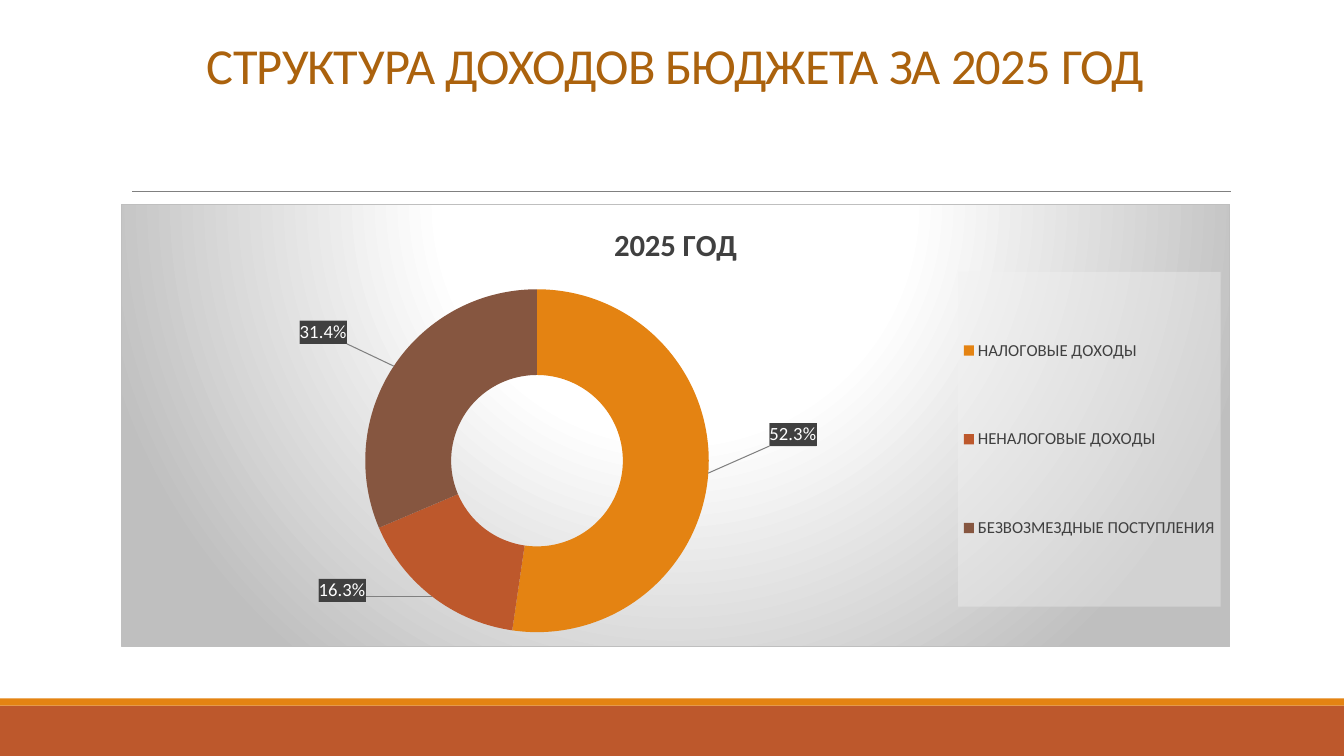
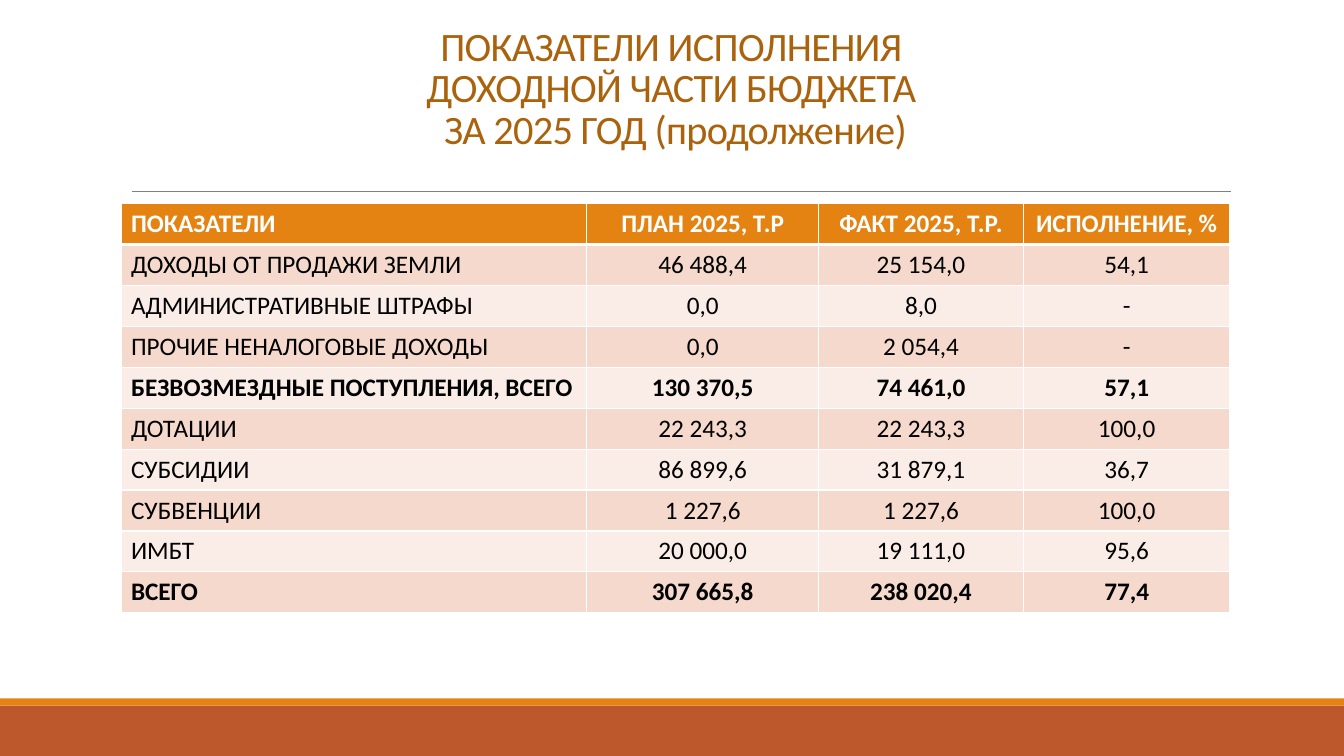
import pptx
import pptx.chart.data
import pptx.dml.color
import pptx.enum.chart
import pptx.enum.shapes
import pptx.enum.text
import pptx.oxml
import pptx.oxml.ns
import pptx.util
from pptx.util import Inches

FONT = "Calibri"
ORANGE, RUST, BROWN, TITLE = "E48312", "BD582C", "865640", "AB620D"
WHITE, BLACK, INK, RULE, SILVER = "FFFFFF", "000000", "404040", "808080", "BFBFBF"
BANDS = "FAEDE7", "F5D9CC"
NS = pptx.oxml.ns.nsdecls("a", "c")
ALIGN = pptx.enum.text.PP_ALIGN
LEFT, WIDTH, TOP = 1.2, 11, 2.02


def color(code):
    return pptx.dml.color.RGBColor.from_string(code)


def parse(xml):
    """Turn an XML string whose root holds {NS} into an element."""
    return pptx.oxml.parse_xml(xml.replace("{NS}", NS))


def style(font, size, code, bold=False):
    font.name, font.size, font.bold = FONT, pptx.util.Pt(size), bold
    font.color.rgb = color(code)


def write(frame, text, size=18, code=BLACK, bold=False, align=ALIGN.LEFT,
          lead=None, space=None):
    """Fill a text frame with one paragraph; space is in points per letter."""
    par = frame.paragraphs[0]
    par.text, par.alignment = text, align
    if lead:
        par.line_spacing = lead
    for run in par.runs:
        style(run.font, size, code, bold)
        if space:
            run.font._element.set("spc", str(round(space * 100)))


def layout(**parts):
    """Manual chart layout from fractions of the chart area."""
    inner = "".join(f'<c:{key} val="{val}"/>' for key, val in parts.items())
    return f"<c:layout {NS}><c:manualLayout>{inner}</c:manualLayout></c:layout>"


def place(part, xml):
    """Set the layout of a plot area or legend."""
    old = part.find(pptx.oxml.ns.qn("c:layout"))
    new = parse(xml)
    if old is not None:
        part.replace(old, new)
    elif part.tag == pptx.oxml.ns.qn("c:plotArea"):
        part.insert(0, new)
    else:
        part.find(pptx.oxml.ns.qn("c:legendPos")).addnext(new)


def labels(shifts):
    """Percent labels moved off the ring, each with a leader line."""
    fill = "".join(f'<a:{tag}><a:srgbClr val="{code}"/></a:{tag}>'
                   for tag, code in (("fgClr", INK), ("bgClr", "595959")))
    flags = "".join(f'<c:show{name} val="{int(name == "Percent")}"/>' for name in
                    ("LegendKey", "Val", "CatName", "SerName", "Percent", "BubbleSize"))
    look = (f'<c:numFmt formatCode="0.0%" sourceLinked="0"/>'
            f'<c:spPr><a:pattFill prst="dkVert">{fill}</a:pattFill></c:spPr>'
            f'<c:txPr><a:bodyPr/><a:p><a:pPr><a:defRPr sz="1330" b="0"><a:solidFill>'
            f'<a:srgbClr val="{WHITE}"/></a:solidFill><a:latin typeface="{FONT}"/>'
            f'</a:defRPr></a:pPr><a:endParaRPr lang="ru-RU"/></a:p></c:txPr>{flags}')
    each = "".join(f'<c:dLbl><c:idx val="{i}"/>{layout(x=x, y=y)}{look}</c:dLbl>'
                   for i, (x, y) in enumerate(shifts))
    return parse(f'<c:dLbls {NS}>{each}{look}<c:showLeaderLines val="1"/>'
                 f'<c:leaderLines><c:spPr><a:ln w="9525"><a:solidFill>'
                 f'<a:srgbClr val="{RULE}"/></a:solidFill></a:ln></c:spPr>'
                 f'</c:leaderLines></c:dLbls>')


class Deck:
    def __init__(self):
        self.file = pptx.Presentation()
        self.file.slide_width, self.file.slide_height = Inches(13.33), Inches(7.5)

    def start(self, title, size, height):
        """Begin a slide with its bands, rule and title."""
        self.shapes = self.file.slides.add_slide(self.file.slide_layouts[6]).shapes
        self.band(7, 0.5, RUST)
        self.band(6.93, 0.07, ORANGE)
        self.rule(1.31, 12.21, 1.9)
        box = self.shapes.add_textbox(Inches(LEFT), Inches(0.31), Inches(WIDTH),
                                      Inches(height))
        box.text_frame.word_wrap = True
        box.text_frame.vertical_anchor = pptx.enum.text.MSO_ANCHOR.BOTTOM
        write(box.text_frame, title, size=size, code=TITLE, align=ALIGN.CENTER,
              lead=0.85, space=-0.5)

    def band(self, top, height, code):
        band = self.shapes.add_shape(pptx.enum.shapes.MSO_SHAPE.RECTANGLE, 0,
                                     Inches(top), self.file.slide_width, Inches(height))
        band.shadow.inherit = False
        band.fill.solid()
        band.fill.fore_color.rgb = color(code)
        band.line.fill.background()

    def rule(self, left, right, top):
        line = self.shapes.add_connector(pptx.enum.shapes.MSO_CONNECTOR.STRAIGHT,
                                         Inches(left), Inches(top),
                                         Inches(right), Inches(top))
        line.line.width = pptx.util.Pt(0.5)
        line.line.color.rgb = color(RULE)
        line._element.spPr.append(parse("<a:effectLst {NS}/>"))

    def ring(self, title, shares, shifts):
        """Doughnut chart; shares maps a name to its value and colour."""
        data = pptx.chart.data.CategoryChartData()
        data.categories = list(shares)
        data.add_series(title, [value for value, code in shares.values()])
        chart = self.shapes.add_chart(
            pptx.enum.chart.XL_CHART_TYPE.DOUGHNUT, Inches(LEFT), Inches(TOP),
            Inches(WIDTH), Inches(4.4), data).chart
        style(chart.font, 10, BLACK)
        chart.has_title = True
        write(chart.chart_title.text_frame, title, size=22, code=INK, bold=True,
              align=ALIGN.CENTER)
        plot = chart.plots[0]
        plot.vary_by_categories = True
        series = plot.series[0]
        for i, (value, code) in enumerate(shares.values()):
            look = series.points[i].format
            look.fill.solid()
            look.fill.fore_color.rgb = color(code)
            look.line.fill.background()
        old = series.data_labels._element
        old.getparent().replace(old, labels(shifts))

        area = chart._chartSpace.chart
        place(area.plotArea, layout(layoutTarget="inner", xMode="edge", yMode="edge",
                                    x=0.22, y=0.19, w=0.31, h=0.78))
        self.legend(chart)
        stops = "".join(f'<a:gs pos="{pos}000"><a:srgbClr val="{code}"/></a:gs>'
                        for pos, code in ((0, WHITE), (39, WHITE), (100, SILVER)))
        area.addnext(parse(
            f'<c:spPr {NS}><a:gradFill><a:gsLst>{stops}</a:gsLst><a:path path="circle">'
            f'<a:fillToRect l="50000" t="-80000" r="50000" b="180000"/></a:path>'
            f'</a:gradFill><a:ln w="9525"><a:solidFill><a:srgbClr val="{SILVER}"/>'
            f'</a:solidFill></a:ln></c:spPr>'))

    def legend(self, chart):
        chart.has_legend = True
        legend = chart.legend
        legend.position = pptx.enum.chart.XL_LEGEND_POSITION.RIGHT
        legend.include_in_layout = False
        style(legend.font, 12, INK)
        part = legend._element
        place(part, layout(xMode="edge", yMode="edge", x=0.755, y=0.153, w=0.237, h=0.757))
        part.find(pptx.oxml.ns.qn("c:txPr")).addprevious(parse(
            '<c:spPr {NS}><a:solidFill><a:srgbClr val="F2F2F2"><a:alpha val="39000"/>'
            '</a:srgbClr></a:solidFill></c:spPr>'))

    def table(self, rows, widths, strong):
        """Banded table; strong lists the rows set in bold."""
        high = 0.406
        grid = self.shapes.add_table(len(rows), len(widths), Inches(LEFT), Inches(TOP),
                                     Inches(WIDTH), Inches(high * len(rows))).table
        for col, width in zip(grid.columns, widths):
            col.width = Inches(width)
        for i, row in enumerate(rows):
            grid.rows[i].height = Inches(high)
            for j, text in enumerate(row):
                cell = grid.cell(i, j)
                write(cell.text_frame, text, code=BLACK if i else WHITE,
                      bold=i in strong, align=ALIGN.CENTER if j else ALIGN.LEFT)
                self.edge(cell, top=3 if i == 1 else 1, base=1 if i else 3)
                cell.fill.solid()
                cell.fill.fore_color.rgb = color(BANDS[i % 2] if i else ORANGE)

    def edge(self, cell, top, base):
        """White cell borders, widths in points."""
        props = cell._tc.get_or_add_tcPr()
        for side, width in zip("LRTB", (1, 1, top, base)):
            props.append(parse(
                f'<a:ln{side} {NS} w="{pptx.util.Pt(width)}"><a:solidFill>'
                f'<a:srgbClr val="{WHITE}"/></a:solidFill></a:ln{side}>'))


def main():
    deck = Deck()
    deck.start("СТРУКТУРА ДОХОДОВ БЮДЖЕТА ЗА 2025 ГОД", 36, 0.68)
    deck.ring("2025 ГОД", {
        "НАЛОГОВЫЕ ДОХОДЫ": (52.3, ORANGE),
        "НЕНАЛОГОВЫЕ ДОХОДЫ": (16.3, RUST),
        "БЕЗВОЗМЕЗДНЫЕ ПОСТУПЛЕНИЯ": (31.4, BROWN),
    }, [(0.115, -0.08), (-0.105, 0.063), (-0.096, -0.13)])

    deck.start("ПОКАЗАТЕЛИ ИСПОЛНЕНИЯ \nДОХОДНОЙ ЧАСТИ БЮДЖЕТА \n"
               "ЗА 2025 ГОД (продолжение)", 28.8, 1.25)
    deck.table([
        ("ПОКАЗАТЕЛИ", "ПЛАН 2025, Т.Р", "ФАКТ 2025, Т.Р.", "ИСПОЛНЕНИЕ, %"),
        ("ДОХОДЫ ОТ ПРОДАЖИ ЗЕМЛИ", "46 488,4", "25 154,0", "54,1"),
        ("АДМИНИСТРАТИВНЫЕ ШТРАФЫ", "0,0", "8,0", "-"),
        ("ПРОЧИЕ НЕНАЛОГОВЫЕ ДОХОДЫ", "0,0", "2 054,4", "-"),
        ("БЕЗВОЗМЕЗДНЫЕ ПОСТУПЛЕНИЯ, ВСЕГО", "130 370,5", "74 461,0", "57,1"),
        ("ДОТАЦИИ", "22 243,3", "22 243,3", "100,0"),
        ("СУБСИДИИ", "86 899,6", "31 879,1", "36,7"),
        ("СУБВЕНЦИИ", "1 227,6", "1 227,6", "100,0"),
        ("ИМБТ", "20 000,0", "19 111,0", "95,6"),
        ("ВСЕГО", "307 665,8", "238 020,4", "77,4"),
    ], widths=(4.62, 2.3, 2.03, 2.05), strong=(0, 4, 9))
    deck.file.save("out.pptx")


if __name__ == "__main__":
    main()
